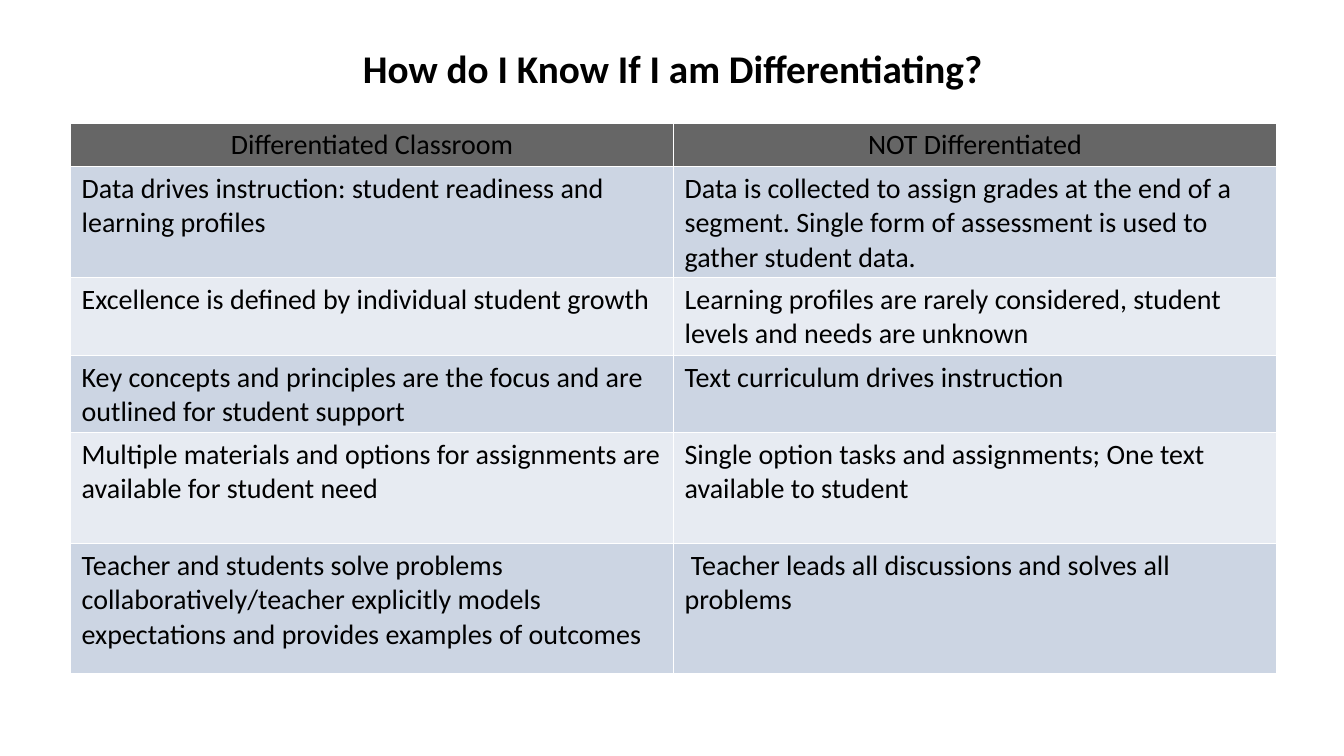
"""Build a slide comparing differentiated and undifferentiated classrooms."""
import pptx
import pptx.dml.color
import pptx.enum.text
import pptx.oxml
import pptx.oxml.ns
import pptx.util

Inches = pptx.util.Inches
Pt = pptx.util.Pt
CENTER = pptx.enum.text.PP_ALIGN.CENTER


def color(hex_code):
    return pptx.dml.color.RGBColor.from_string(hex_code)


def style_text(paragraph, size, bold=False):
    paragraph.font.name = "Calibri"
    paragraph.font.size = Pt(size)
    paragraph.font.bold = bold
    paragraph.font.color.rgb = color("000000")


comparison = [
    ("Differentiated Classroom", "NOT Differentiated"),
    ("Data drives instruction: student readiness and learning profiles",
     "Data is collected to assign grades at the end of a segment. "
     "Single form of assessment is used to gather student data."),
    ("Excellence is defined by individual student growth",
     "Learning profiles are rarely considered, student levels and needs are unknown"),
    ("Key concepts and principles are the focus and are outlined for student support",
     "Text curriculum drives instruction"),
    ("Multiple materials and options for assignments are available for student need",
     "Single option tasks and assignments; One text available to student"),
    ("Teacher and students solve problems collaboratively/teacher explicitly "
     "models expectations and provides examples of outcomes",
     " Teacher leads all discussions and solves all problems"),
]
row_heights = [0.43, 1.1, 0.77, 0.77, 1.1, 1.29]
header_fill = "666666"
band_fills = ["E7EBF2", "CCD5E3"]

presentation = pptx.Presentation()
presentation.slide_width = Inches(13.33)
presentation.slide_height = Inches(7.5)
slide = presentation.slides.add_slide(presentation.slide_layouts[6])

title = slide.shapes.add_textbox(Inches(0.67), Inches(0.3), Inches(12), Inches(0.74)).text_frame
title.word_wrap = True
title.vertical_anchor = pptx.enum.text.MSO_ANCHOR.MIDDLE
title.text = "How do I Know If I am Differentiating?"
title.paragraphs[0].alignment = CENTER
style_text(title.paragraphs[0], 28, bold=True)

classrooms = slide.shapes.add_table(
    len(comparison), 2, Inches(0.7), Inches(1.22), Inches(11.96), Inches(sum(row_heights))
).table
for column in classrooms.columns:
    column.width = Inches(5.98)

for row_index, (row_texts, height) in enumerate(zip(comparison, row_heights)):
    classrooms.rows[row_index].height = Inches(height)
    for column_index, text in enumerate(row_texts):
        cell = classrooms.cell(row_index, column_index)
        cell.margin_left = cell.margin_right = Inches(0.11)
        cell.margin_top = cell.margin_bottom = Inches(0.05)
        cell.text = text
        paragraph = cell.text_frame.paragraphs[0]
        style_text(paragraph, 20)
        if row_index == 0:
            paragraph.alignment = CENTER
        cell_properties = cell._tc.get_or_add_tcPr()
        for side in ("lnL", "lnR", "lnT", "lnB"):
            cell_properties.append(pptx.oxml.parse_xml(
                f'<a:{side} {pptx.oxml.ns.nsdecls("a")} w="{Pt(1)}"><a:solidFill>'
                f'<a:srgbClr val="FFFFFF"/></a:solidFill></a:{side}>'
            ))
        cell.fill.solid()
        cell.fill.fore_color.rgb = color(band_fills[row_index % 2] if row_index else header_fill)

presentation.save("out.pptx")
